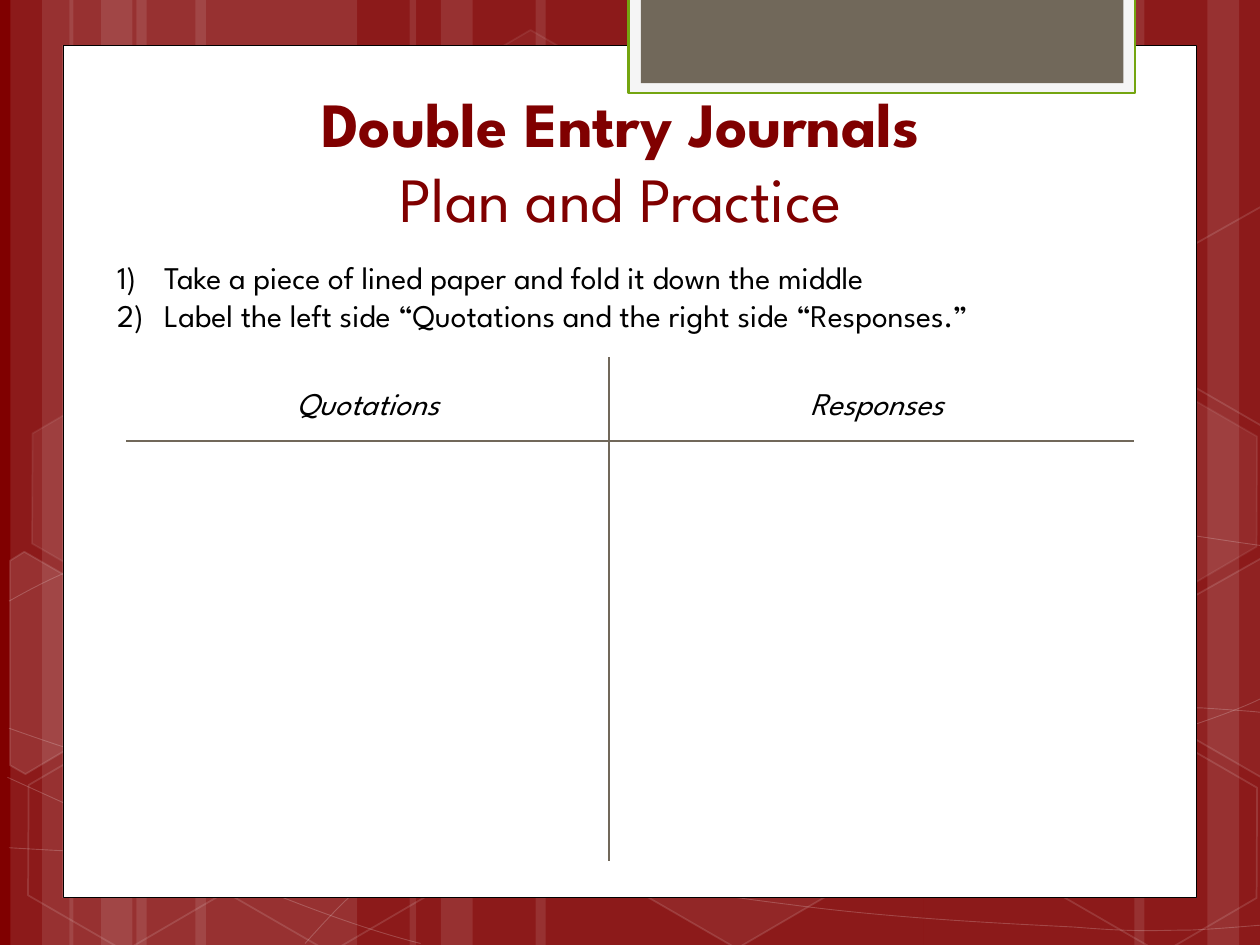
from lxml.etree import SubElement
from pptx import Presentation
from pptx.dml.color import RGBColor
from pptx.enum.shapes import MSO_CONNECTOR, MSO_SHAPE
from pptx.enum.text import MSO_ANCHOR, MSO_AUTO_SIZE, PP_ALIGN
from pptx.oxml.ns import qn
from pptx.util import Cm, Pt

FONT = "League Spartan"
COLORS = {
    "maroon": "800000", "white": "FFFFFF", "black": "000000",
    "tab_frame": "F5F5F5", "green": "74A510", "taupe": "71685A",
}
WIDTH, HEIGHT = 25.4, 19.05

STRIPE_GROUP = [(2.75, 4.45), (0.21, 1.27), (0.85, 2.11)]
STRIPES = STRIPE_GROUP + [(x + 1.19, w) for x, w in STRIPE_GROUP] + [
    (18.62, 4.45), (24.34, 1.27), (22.87, 2.11),
    (10.8, 7.82), (8.26, 1.27), (8.89, 2.11),
]
CURVES = [
    [(0.18, 17.09), (1.55, 17.17), (2.92, 17.25), (4.83, 17.22),
     (6.73, 17.2), (9.09, 17.15), (11.63, 16.89),
     (14.17, 16.64), (17.78, 16.15), (20.12, 15.67),
     (22.43, 15.19), (24.82, 14.43), (25.58, 14)],
    [(0.18, 12.12), (0.91, 11.71), (1.65, 11.33), (3.07, 10.95),
     (4.52, 10.57), (6.58, 10.01), (8.81, 9.83),
     (11.07, 9.65), (13.82, 9.63), (16.61, 9.83),
     (19.41, 10.03), (24.05, 10.82), (25.58, 11.02)],
    [(0.15, 15.67), (3.23, 17.07), (6.27, 18.47), (8.48, 19.02)],
    [(0.18, 14.68), (0.97, 14.96), (1.78, 15.24), (3.25, 15.65),
     (4.72, 16.03), (6.93, 16.66), (9.07, 17.09),
     (11.18, 17.53), (13.84, 17.98), (15.95, 18.24),
     (18.06, 18.52), (20.32, 18.62), (21.67, 18.69),
     (22.99, 18.8), (23.34, 18.75), (24, 18.75),
     (24.66, 18.72), (25.12, 18.67), (25.58, 18.64)],
    [(6.15, 19.02), (6.6, 18.52), (7.06, 18.01), (7.67, 17.55),
     (8.28, 17.09), (9.14, 16.59), (9.86, 16.23),
     (10.57, 15.88), (11, 15.72), (11.94, 15.47),
     (12.85, 15.21), (14.55, 14.86), (15.44, 14.68),
     (16.36, 14.5), (16.48, 14.5), (17.27, 14.45),
     (18.06, 14.38), (19.3, 14.3), (20.17, 14.27),
     (21.06, 14.25), (22.5, 14.27), (22.5, 14.27),
     (23.07, 14.27), (23.64, 14.27), (24.21, 14.27),
     (24.66, 14.3), (25.1, 14.33), (25.32, 14.35),
     (25.55, 14.38), (25.48, 14.35), (25.55, 14.38)],
]
HEXAGONS = [
    (8.48, 0.91, 4, 8), (12.62, 14.96, 6, 12), (0.28, 15.01, 0, 12),
    (0.36, 7.92, 7, 8), (4.42, 15.04, 0, 12), (19.13, 11.51, 10, 12),
    (21.18, 15.06, 0, 12), (21.18, 7.98, 7, 8),
]
LEFT_CUT = [(-1.76, -1.63), (-1.6, -1.93), (0.65, -1.93),
            (1.74, 0.02), (0.66, 1.94), (0.3, 1.94)]
RIGHT_CUT = [(-1.74, -0.02), (-0.61, -1.93), (-0.41, -1.93),
             (1.71, 1.74), (1.6, 1.92), (-0.63, 1.92)]
CUT_HEXAGONS = [
    (0.91, 13.59, LEFT_CUT, 10),
    (25.02, 13.21, RIGHT_CUT, 4),
    (25.02, 6.12, RIGHT_CUT, 0),
]
STEPS = [
    "Take a piece of lined paper and fold it down the middle",
    "Label the left side “Quotations and the right side “Responses.”",
]


def rgb(name):
    return RGBColor.from_string(COLORS[name])


def set_alpha(sp, tags, percent):
    clr = sp.element.spPr.find("/".join(qn(tag) for tag in tags))
    SubElement(clr, qn("a:alpha"), val=str(percent * 1000))


def style(sp, fill=None, line=None, width=1, fill_alpha=100, line_alpha=100):
    sp.shadow.inherit = False
    if fill and fill_alpha:
        sp.fill.solid()
        sp.fill.fore_color.rgb = rgb(fill)
        if fill_alpha < 100:
            set_alpha(sp, ["a:solidFill", "a:srgbClr"], fill_alpha)
    else:
        sp.fill.background()
    if line:
        sp.line.color.rgb = rgb(line)
        sp.line.width = Pt(width)
        if line_alpha < 100:
            set_alpha(sp, ["a:ln", "a:solidFill", "a:srgbClr"], line_alpha)
    else:
        sp.line.fill.background()


def add_rect(s, x, y, w, h, **look):
    sp = s.shapes.add_shape(MSO_SHAPE.RECTANGLE, Cm(x), Cm(y), Cm(w), Cm(h))
    style(sp, **look)


def add_hexagon(s, x, y, fill_alpha, line_alpha):
    sp = s.shapes.add_shape(MSO_SHAPE.HEXAGON, Cm(x), Cm(y), Cm(4.45), Cm(3.86))
    sp.adjustments[0] = 0.285
    sp.rotation = 30
    style(sp, "white", "white", 1, fill_alpha, line_alpha)


def add_outline(s, points, close):
    pts = [(Cm(x), Cm(y)) for x, y in points]
    fb = s.shapes.build_freeform(*pts[0])
    fb.add_line_segments(pts[1:], close=close)
    return fb.convert_to_shape()


def add_cut_hexagon(s, x, y, corners, fill_alpha):
    sp = add_outline(s, [(x + dx, y + dy) for dx, dy in corners], True)
    sp.rotation = 30
    style(sp, "white", "white", 1, fill_alpha, 12)


def add_curve(s, knots):
    sp = add_outline(s, knots, False)
    lines = list(sp.element.iter(qn("a:lnTo")))
    outline = lines[0].getparent()
    for i in range(0, len(lines), 3):
        bezier = SubElement(outline, qn("a:cubicBezTo"))
        for line in lines[i:i + 3]:
            bezier.append(line[0])
            outline.remove(line)
    style(sp, line="white", width=0.5, line_alpha=20)


def add_rule(s, x1, y1, x2, y2):
    cn = s.shapes.add_connector(MSO_CONNECTOR.STRAIGHT, Cm(x1), Cm(y1), Cm(x2), Cm(y2))
    cn.line.color.rgb = rgb("taupe")
    cn.line.width = Pt(1.25)
    SubElement(cn.element.spPr, qn("a:effectLst"))


def add_run(p, text, size=18, color="black", bold=False, italic=False):
    r = p.add_run()
    r.text = text
    r.font.name = FONT
    r.font.size = Pt(size)
    r.font.bold = bold
    r.font.italic = italic
    r.font.color.rgb = rgb(color)


def add_text_box(s, x, y, w, h):
    tf = s.shapes.add_textbox(Cm(x), Cm(y), Cm(w), Cm(h)).text_frame
    tf.word_wrap = True
    tf.auto_size = MSO_AUTO_SIZE.SHAPE_TO_FIT_TEXT
    return tf


def add_steps(s):
    tf = add_text_box(s, 2.11, 5.08, 21.17, 1.8)
    for i, step in enumerate(STEPS):
        p = tf.paragraphs[0] if i == 0 else tf.add_paragraph()
        pPr = p._p.get_or_add_pPr()
        pPr.set("marL", str(Cm(0.95)))
        pPr.set("indent", str(-Cm(0.95)))
        SubElement(pPr, qn("a:buAutoNum"), type="arabicParenR")
        add_run(p, step)


def add_heading(s, text, x, w):
    p = add_text_box(s, x, 7.62, w, 1.03).paragraphs[0]
    p.alignment = PP_ALIGN.CENTER
    add_run(p, text, italic=True)


def add_title(s):
    title = s.shapes.title
    title.element.getparent().append(title.element)
    title.left, title.top, title.width, title.height = Cm(2.76), Cm(2.33), Cm(19.5), Cm(2.54)
    tf = title.text_frame
    tf.word_wrap = True
    tf.auto_size = MSO_AUTO_SIZE.NONE
    tf.vertical_anchor = MSO_ANCHOR.BOTTOM
    p = tf.paragraphs[0]
    p.alignment = PP_ALIGN.CENTER
    add_run(p, "Double Entry Journals", 36, "maroon", bold=True)
    p.add_line_break()
    add_run(p, "Plan and Practice", 36, "maroon")


def add_backdrop(s):
    s.background.fill.solid()
    s.background.fill.fore_color.rgb = rgb("maroon")
    for x, w in STRIPES:
        add_rect(s, x, 0, w, HEIGHT, fill="white", fill_alpha=10)
    for knots in CURVES:
        add_curve(s, knots)
    for hexagon in HEXAGONS:
        add_hexagon(s, *hexagon)
    for cut_hexagon in CUT_HEXAGONS:
        add_cut_hexagon(s, *cut_hexagon)
    add_rect(s, 1.27, 0.91, 22.86, 17.19, fill="white", line="black", width=0.5)
    add_rect(s, 12.67, -0.05, 10.21, 1.93, fill="tab_frame", line="green", width=1.25)
    add_rect(s, 12.92, -0.05, 9.73, 1.73, fill="taupe")


def main():
    prs = Presentation()
    prs.slide_width, prs.slide_height = Cm(WIDTH), Cm(HEIGHT)
    s = prs.slides.add_slide(prs.slide_layouts[5])
    add_backdrop(s)
    add_title(s)
    add_steps(s)
    add_rule(s, 2.54, 8.89, 22.86, 8.89)
    add_rule(s, 12.28, 7.2, 12.28, 17.36)
    add_heading(s, "Quotations", 3.18, 8.47)
    add_heading(s, "Responses", 12.7, 9.95)
    prs.save("out.pptx")


if __name__ == "__main__":
    main()
